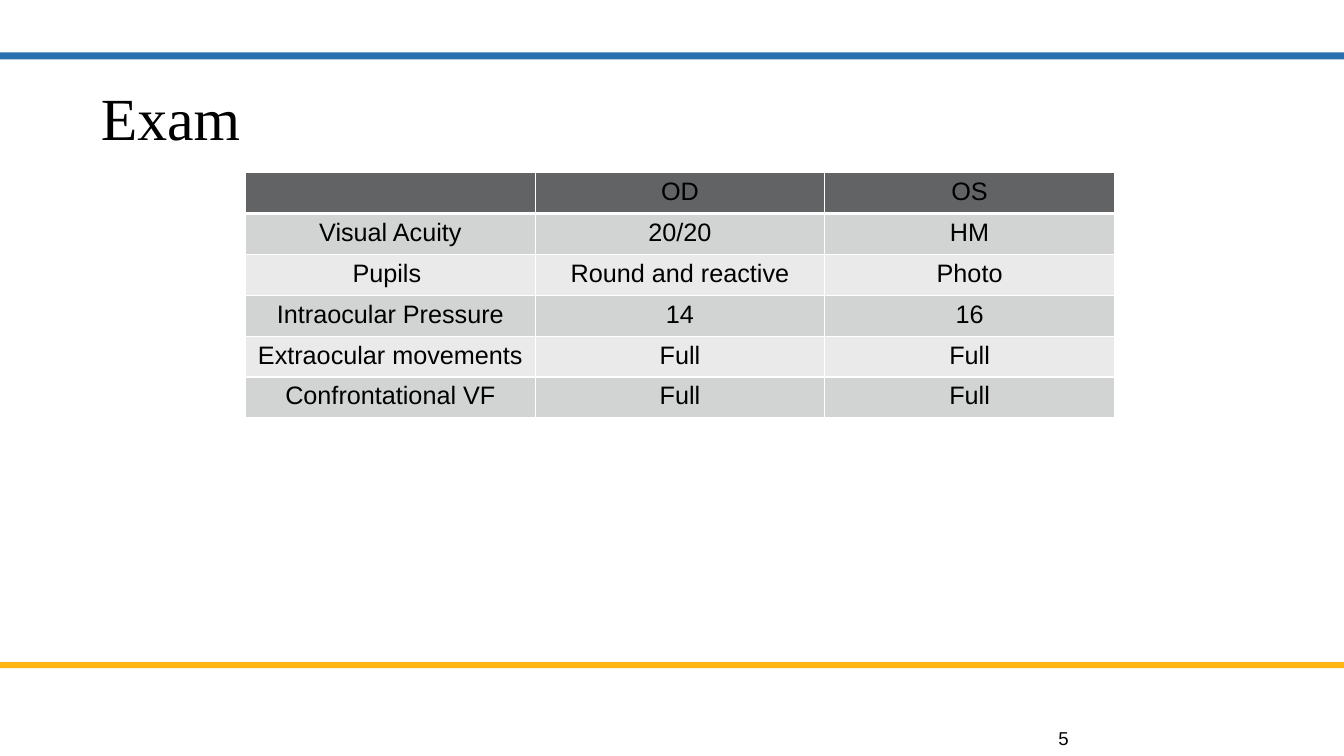
from pptx import Presentation
from pptx.dml.color import RGBColor
from pptx.enum.shapes import MSO_SHAPE as Preset
from pptx.enum.text import MSO_ANCHOR as Anchor, MSO_AUTO_SIZE as AutoSize, PP_ALIGN as Align
from pptx.oxml.ns import qn
from pptx.util import Inches, Pt
from lxml.etree import SubElement

COLORS = {
    "gold": "FFB612",
    "blue": "2B70AE",
    "text": "000000",
    "header": "616365",
    "band_dark": "D2D3D3",
    "band_light": "EAEAEA",
    "border": "FFFFFF",
}
HEADING_FONT = "Times New Roman"
BODY_FONT = "Arial"

EXAM_ROWS = [
    ("", "OD", "OS"),
    ("Visual Acuity", "20/20", "HM"),
    ("Pupils ", "Round and reactive", "Photo"),
    ("Intraocular Pressure", "14", "16"),
    ("Extraocular movements", "Full", "Full"),
    ("Confrontational VF", "Full", "Full"),
]


class ExamSlide:
    """Draws on one slide; all lengths are percentages of its width or height."""

    def __init__(self, presentation):
        self.width = presentation.slide_width
        self.height = presentation.slide_height
        self.slide = presentation.slides.add_slide(presentation.slide_layouts[5])

    def box(self, left, top, width, height):
        """Turn percentages into left, top, width and height in EMU."""
        return (round(left * self.width / 100), round(top * self.height / 100),
                round(width * self.width / 100), round(height * self.height / 100))

    def paint(self, fill, color):
        fill.solid()
        fill.fore_color.rgb = RGBColor.from_string(COLORS[color])

    def style_font(self, font, size, name=BODY_FONT):
        font.name = name
        font.size = Pt(size)
        font.bold = False
        font.color.rgb = RGBColor.from_string(COLORS["text"])

    def fill_frame(self, frame, text, size, anchor, font_name=BODY_FONT):
        frame.word_wrap = True
        frame.auto_size = AutoSize.NONE
        frame.vertical_anchor = anchor
        frame.margin_left = frame.margin_top = frame.margin_right = frame.margin_bottom = 0
        paragraph = frame.paragraphs[0]
        paragraph.alignment = Align.LEFT
        run = paragraph.add_run()
        run.text = text
        self.style_font(run.font, size, font_name)

    def bar(self, top, height, color):
        shape = self.slide.shapes.add_shape(Preset.RECTANGLE, *self.box(0, top, 100, height))
        shape.shadow.inherit = False
        self.paint(shape.fill, color)
        shape.line.fill.background()

    def title(self, text, *place):
        title = self.slide.shapes.title
        title.left, title.top, title.width, title.height = self.box(*place)
        self.fill_frame(title.text_frame, text, 42.7, Anchor.BOTTOM, HEADING_FONT)

    def page_number(self, text, *place):
        text_box = self.slide.shapes.add_textbox(*self.box(*place))
        self.fill_frame(text_box.text_frame, text, 13.3, Anchor.MIDDLE)

    def border(self, cell, is_header):
        properties = cell._tc.get_or_add_tcPr()
        for index, side in enumerate(("lnL", "lnR", "lnT", "lnB")):
            points = 3 if is_header and side == "lnB" else 1
            line = properties.makeelement(qn(f"a:{side}"), {"w": str(Pt(points))})
            fill = SubElement(line, qn("a:solidFill"))
            SubElement(fill, qn("a:srgbClr"), val=COLORS["border"])
            properties.insert(index, line)

    def table(self, rows, left, top, column_width, row_height):
        place = self.box(left, top, column_width * len(rows[0]), row_height * len(rows))
        table = self.slide.shapes.add_table(len(rows), len(rows[0]), *place).table
        for row_index, values in enumerate(rows):
            is_header = row_index == 0
            band = "band_dark" if row_index % 2 else "band_light"
            for column_index, value in enumerate(values):
                cell = table.cell(row_index, column_index)
                self.paint(cell.fill, "header" if is_header else band)
                self.border(cell, is_header)
                paragraph = cell.text_frame.paragraphs[0]
                paragraph.alignment = Align.CENTER
                if value:
                    run = paragraph.add_run()
                    run.text = value
                    self.style_font(run.font, 18)


def main():
    presentation = Presentation()
    presentation.slide_width = Inches(13.33)
    presentation.slide_height = Inches(7.5)

    exam = ExamSlide(presentation)
    exam.bar(87.6, 0.8, "gold")
    exam.bar(6.93, 0.93, "blue")
    exam.title("Exam", 7.5, 8.67, 85, 11.47)
    exam.page_number("5", 78.75, 95.47, 20, 4.27)
    exam.table(EXAM_ROWS, left=18.27, top=22.84, column_width=21.55, row_height=5.41)

    presentation.save("out.pptx")


if __name__ == "__main__":
    main()
